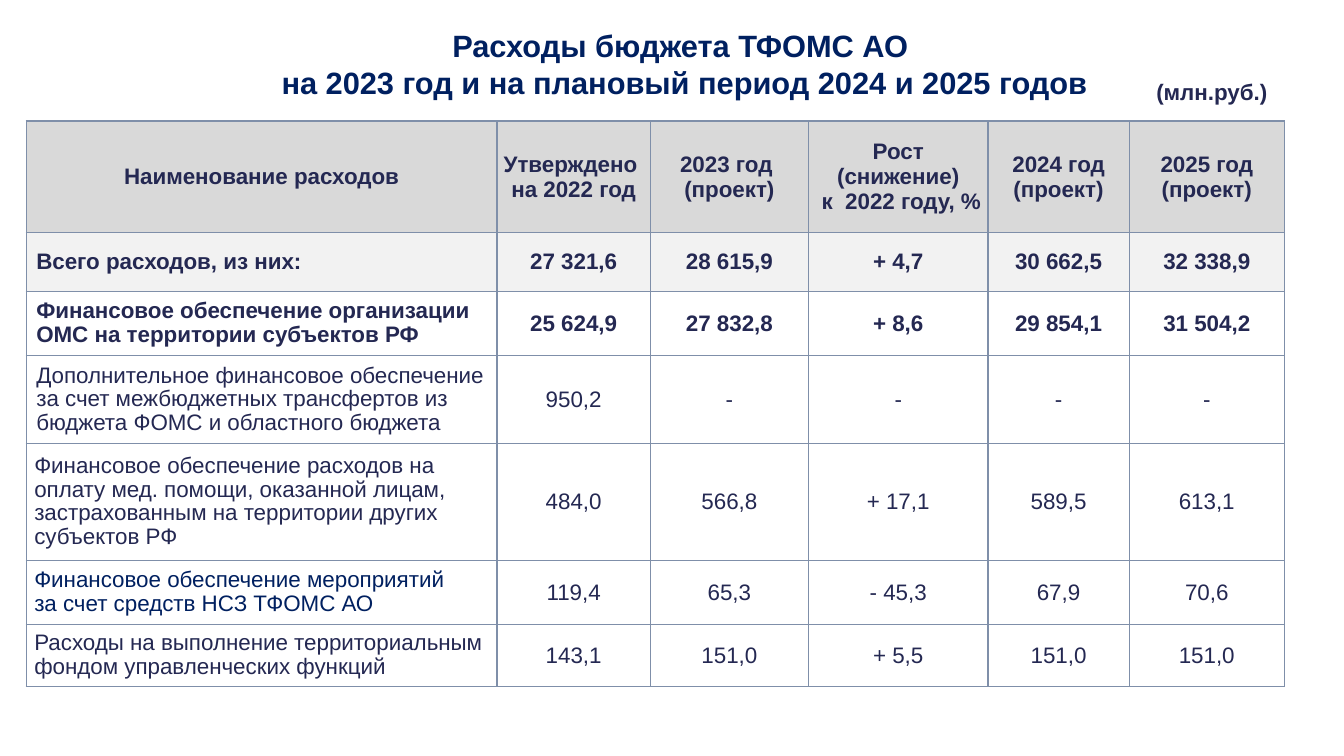
from lxml.etree import SubElement
from pptx import Presentation
from pptx.dml.color import RGBColor
from pptx.enum.text import MSO_ANCHOR as ANCHOR, PP_ALIGN as ALIGN
from pptx.oxml.ns import qn
from pptx.util import Inches, Pt

NAVY = RGBColor(0x00, 0x20, 0x60)
INK = RGBColor(0x24, 0x28, 0x52)
HEADER_GREY = RGBColor(0xD9, 0xD9, 0xD9)
TOTAL_GREY = RGBColor(0xF2, 0xF2, 0xF2)
BORDER = RGBColor(0x7F, 0x8F, 0xA9)

COLUMN_WIDTHS = [4.67, 1.52, 1.57, 1.78, 1.4, 1.54]
ROW_HEIGHTS = [1.11, 0.58, 0.64, 0.87, 1.16, 0.64, 0.61]
HEADER_INSETS = [0.1, 0.05, 0.1, 0, 0.1, 0.1]
NAME_INSETS = [0.1, 0.1, 0.1, 0.1, 0.08, 0.08, 0.08]
NSZ_ROW = 5  # its name is navy

# "\v" breaks a line, "\n" starts a paragraph
EXPENSES = [
    ["Наименование расходов", "Утверждено \vна 2022 год", "2023 год \n(проект)",
     "Рост (снижение)\v к  2022 году, %", "2024 год (проект)", "2025 год (проект)"],
    ["Всего расходов, из них:",
     "27 321,6", "28 615,9", "+ 4,7", "30 662,5", "32 338,9"],
    ["Финансовое обеспечение организации ОМС на территории субъектов РФ",
     "25 624,9", "27 832,8", "+ 8,6", "29 854,1", "31 504,2"],
    ["Дополнительное финансовое обеспечение за счет межбюджетных трансфертов "
     "из бюджета ФОМС и областного бюджета",
     "950,2", "-", "-", "-", "-"],
    ["Финансовое обеспечение расходов на оплату мед. помощи, оказанной лицам, "
     "застрахованным на территории других субъектов РФ",
     "484,0", "566,8", "+ 17,1", "589,5", "613,1"],
    ["Финансовое обеспечение мероприятий \vза счет средств НСЗ ТФОМС АО",
     "119,4", "65,3", "- 45,3", "67,9", "70,6"],
    ["Расходы на выполнение территориальным фондом управленческих функций",
     "143,1", "151,0", "+ 5,5", "151,0", "151,0"],
]


def write(frame, text, size, color, bold, align):
    frame.word_wrap = True
    frame.text = text
    for paragraph in frame.paragraphs:
        paragraph.alignment = align
        font = paragraph.font
        font.name, font.size, font.bold = "Arial", Pt(size), bold
        font.color.rgb = color


def add_borders(cell):
    properties = cell._tc.get_or_add_tcPr()
    for side in ("a:lnL", "a:lnR", "a:lnT", "a:lnB"):
        line = SubElement(properties, qn(side), w=str(Pt(1)))
        fill = SubElement(line, qn("a:solidFill"))
        SubElement(fill, qn("a:srgbClr"), val=str(BORDER))


prs = Presentation()
prs.slide_width, prs.slide_height = Inches(13.33), Inches(7.5)
slide = prs.slides.add_slide(prs.slide_layouts[6])

# Title
title = slide.shapes.add_textbox(Inches(1.71), Inches(0.21), Inches(10.16), Inches(0.84))
title.text_frame.vertical_anchor = ANCHOR.MIDDLE
write(title.text_frame,
      "Расходы бюджета ТФОМС АО \vна 2023 год и на плановый период 2024 и 2025 годов",
      22, NAVY, True, ALIGN.CENTER)

# Expense table
budget = slide.shapes.add_table(
    len(ROW_HEIGHTS), len(COLUMN_WIDTHS), Inches(0.26), Inches(1.2),
    Inches(sum(COLUMN_WIDTHS)), Inches(sum(ROW_HEIGHTS))).table
for column, width in zip(budget.columns, COLUMN_WIDTHS):
    column.width = Inches(width)
for row, height in zip(budget.rows, ROW_HEIGHTS):
    row.height = Inches(height)

for r, expense in enumerate(EXPENSES):
    for c, text in enumerate(expense):
        cell = budget.cell(r, c)
        is_name = r > 0 and c == 0
        write(cell.text_frame, text, 16, NAVY if is_name and r == NSZ_ROW else INK,
              r < 3, ALIGN.LEFT if is_name else ALIGN.CENTER)
        if is_name:
            cell.text_frame.paragraphs[0].line_spacing = 0.95

        # Insets and anchor
        if r == 0:
            inset = HEADER_INSETS[c]
        elif is_name:
            inset = NAME_INSETS[r]
        else:
            inset = 0.08 if c == 1 else 0.1
        cell.margin_left = cell.margin_right = Inches(inset)
        cell.margin_top = cell.margin_bottom = 0
        cell.vertical_anchor = ANCHOR.MIDDLE

        # Borders come before the fill in the cell properties
        add_borders(cell)
        if r < 2:
            cell.fill.solid()
            cell.fill.fore_color.rgb = TOTAL_GREY if r else HEADER_GREY
        else:
            cell.fill.background()

# Unit of measure
unit = slide.shapes.add_textbox(Inches(10.92), Inches(0.73), Inches(1.81), Inches(0.37))
write(unit.text_frame, "(млн.руб.) ", 16, INK, True, ALIGN.RIGHT)

prs.save("out.pptx")
